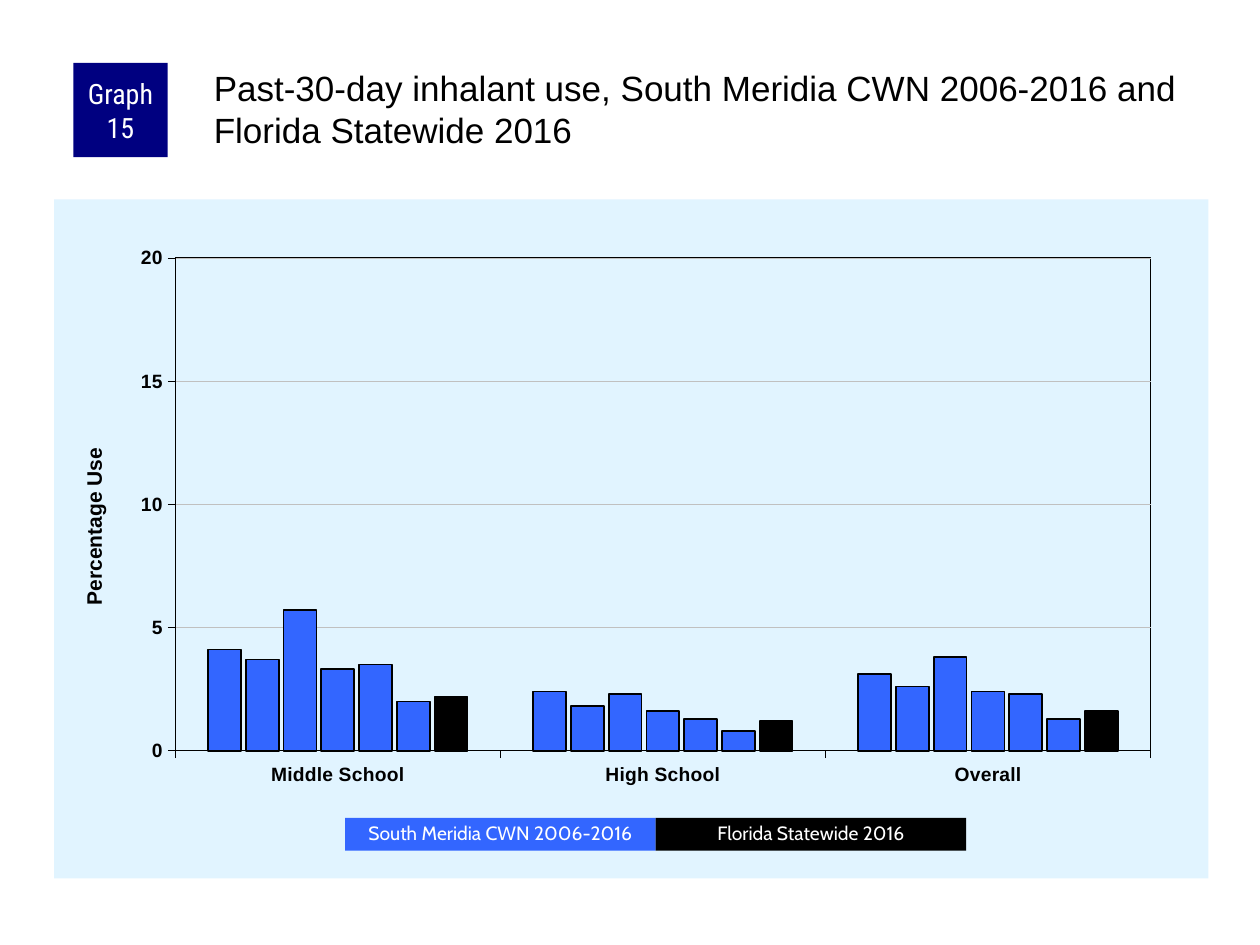
import pptx
import pptx.chart.data
import pptx.dml.color
import pptx.enum.chart
import pptx.enum.shapes
import pptx.enum.text
import pptx.oxml
import pptx.oxml.ns
import pptx.util

Cm, Pt = pptx.util.Cm, pptx.util.Pt
COLORS = {"navy": "000080", "blue": "3366FF", "black": "000000",
          "white": "FFFFFF", "panel": "E1F4FF", "grid": "C0C0C0"}
REGION, STATE = "South Meridia CWN 2006-2016", "Florida Statewide 2016"
CATEGORIES = ["Middle School", "High School", "Overall"]
SERIES = [(4.1, 2.4, 3.1), (3.7, 1.8, 2.6), (5.7, 2.3, 3.8), (3.3, 1.6, 2.4),
          (3.5, 1.3, 2.3), (2.0, 0.8, 1.3), (2.2, 1.2, 1.6)]


def rgb(name):
    return pptx.dml.color.RGBColor.from_string(COLORS[name])


def style_font(font, size, color, name="Arial", bold=False):
    font.size, font.name, font.bold = Pt(size), name, bold
    font.color.rgb = rgb(color)


def style_line(line, color, width):
    line.color.rgb = rgb(color)
    line.width = Pt(width)


def add_label(slide, box, text, fill, size, font, spacing=1.0):
    """Filled rectangle with centred white text."""
    sp = slide.shapes.add_shape(pptx.enum.shapes.MSO_SHAPE.RECTANGLE, *map(Cm, box))
    sp.shadow.inherit = False
    sp.fill.solid()
    sp.fill.fore_color.rgb = rgb(fill)
    sp.line.fill.background()
    tf = sp.text_frame
    tf.word_wrap = True
    tf.vertical_anchor = pptx.enum.text.MSO_ANCHOR.MIDDLE
    tf.margin_left = tf.margin_right = Cm(0.13)
    tf.margin_top = tf.margin_bottom = 0
    tf.text = text
    p = tf.paragraphs[0]
    p.alignment = pptx.enum.text.PP_ALIGN.CENTER
    p.line_spacing = spacing
    style_font(p.runs[0].font, size, "white", font)


def add_header(slide, left, top, width):
    # Graph number
    add_label(slide, (left, top, 1.9, 1.9), "Graph 15", "navy", 16, "Roboto Condensed")
    # Title
    indent = 2.75
    s = slide.shapes.add_textbox(Cm(left + indent), Cm(top), Cm(width - indent), Cm(2.11))
    tf = s.text_frame
    tf.word_wrap = True
    tf.margin_left = tf.margin_top = Cm(0.08)
    tf.margin_right = tf.margin_bottom = 0
    tf.text = f"Past-30-day inhalant use, {REGION} and {STATE}"
    style_font(tf.paragraphs[0].runs[0].font, 20, "black")


def shape_properties(fill, line):
    """Chart part properties; None means no fill or no line."""
    def paint(color):
        if color is None:
            return "<a:noFill/>"
        return f'<a:solidFill><a:srgbClr val="{COLORS[color]}"/></a:solidFill>'
    return pptx.oxml.parse_xml(
        f'<c:spPr {pptx.oxml.ns.nsdecls("c", "a")}>{paint(fill)}'
        f'<a:ln w="9525">{paint(line)}</a:ln></c:spPr>')


def set_layout(parent, index, target="", **fractions):
    """Fixed place of a chart part, in fractions of the chart."""
    for old in parent.findall(pptx.oxml.ns.qn("c:layout")):
        parent.remove(old)
    sizes = "".join(f'<c:{tag} val="{val}"/>' for tag, val in fractions.items())
    parent.insert(index, pptx.oxml.parse_xml(
        f'<c:layout {pptx.oxml.ns.nsdecls("c")}><c:manualLayout>{target}'
        f'<c:xMode val="edge"/><c:yMode val="edge"/>{sizes}'
        '</c:manualLayout></c:layout>'))


def style_areas(chart):
    """Panel fill, plot border and inner plot position."""
    space = chart.element
    space.chart.addnext(shape_properties("panel", None))
    plot_area = space.chart.plotArea
    set_layout(plot_area, 0, '<c:layoutTarget val="inner"/>',
               x=0.105, y=0.086, w=0.845, h=0.726)
    plot_area.append(shape_properties(None, "black"))


def add_usage_chart(slide, left, top, width, height):
    data = pptx.chart.data.CategoryChartData(number_format="General")
    data.categories = CATEGORIES
    for number, values in enumerate(SERIES, 1):
        data.add_series(f"Series {number}", values)
    chart = slide.shapes.add_chart(
        pptx.enum.chart.XL_CHART_TYPE.COLUMN_CLUSTERED,
        Cm(left), Cm(top), Cm(width), Cm(height), data).chart
    chart.has_legend = chart.has_title = False
    style_font(chart.font, 8, "black")
    style_areas(chart)

    # Columns: the last series is the statewide one
    plot = chart.plots[0]
    plot.gap_width, plot.overlap, plot.vary_by_categories = 200, -15, False
    for i, series in enumerate(plot.series, 1):
        series.invert_if_negative = False
        series.format.fill.solid()
        series.format.fill.fore_color.rgb = rgb("black" if i == len(SERIES) else "blue")
        style_line(series.format.line, "black", 1)

    # Axes
    for axis in (chart.category_axis, chart.value_axis):
        axis.major_tick_mark = pptx.enum.chart.XL_TICK_MARK.OUTSIDE
        axis.minor_tick_mark = pptx.enum.chart.XL_TICK_MARK.NONE
        style_font(axis.tick_labels.font, 11, "black", bold=True)
        style_line(axis.format.line, "black", 0.25)
    axis = chart.value_axis
    axis.minimum_scale, axis.maximum_scale, axis.major_unit = 0, 20, 5
    style_line(axis.major_gridlines.format.line, "grid", 0.25)
    title = axis.axis_title
    tf = title.text_frame
    tf.text = "Percentage Use"
    style_font(tf.paragraphs[0].runs[0].font, 12, "black", bold=True)
    set_layout(title._element, 1, x=0.02, y=0.36)


def add_legend(slide, left, top, width, height):
    entries = [(REGION, "blue"), (STATE, "black")]
    w = width / len(entries)
    for i, (text, fill) in enumerate(entries):
        add_label(slide, (left + i * w, top, w, height), text, fill, 11, "Cabin", 0.9)


def main():
    prs = pptx.Presentation()
    prs.slide_width, prs.slide_height = Cm(25.4), Cm(19.05)
    slide = prs.slides.add_slide(prs.slide_layouts[6])
    add_usage_chart(slide, 1.09, 4.02, 23.27, 13.69)
    add_header(slide, 1.48, 1.27, 22.88)
    add_legend(slide, 6.96, 16.49, 12.52, 0.66)
    prs.save("out.pptx")


if __name__ == "__main__":
    main()
